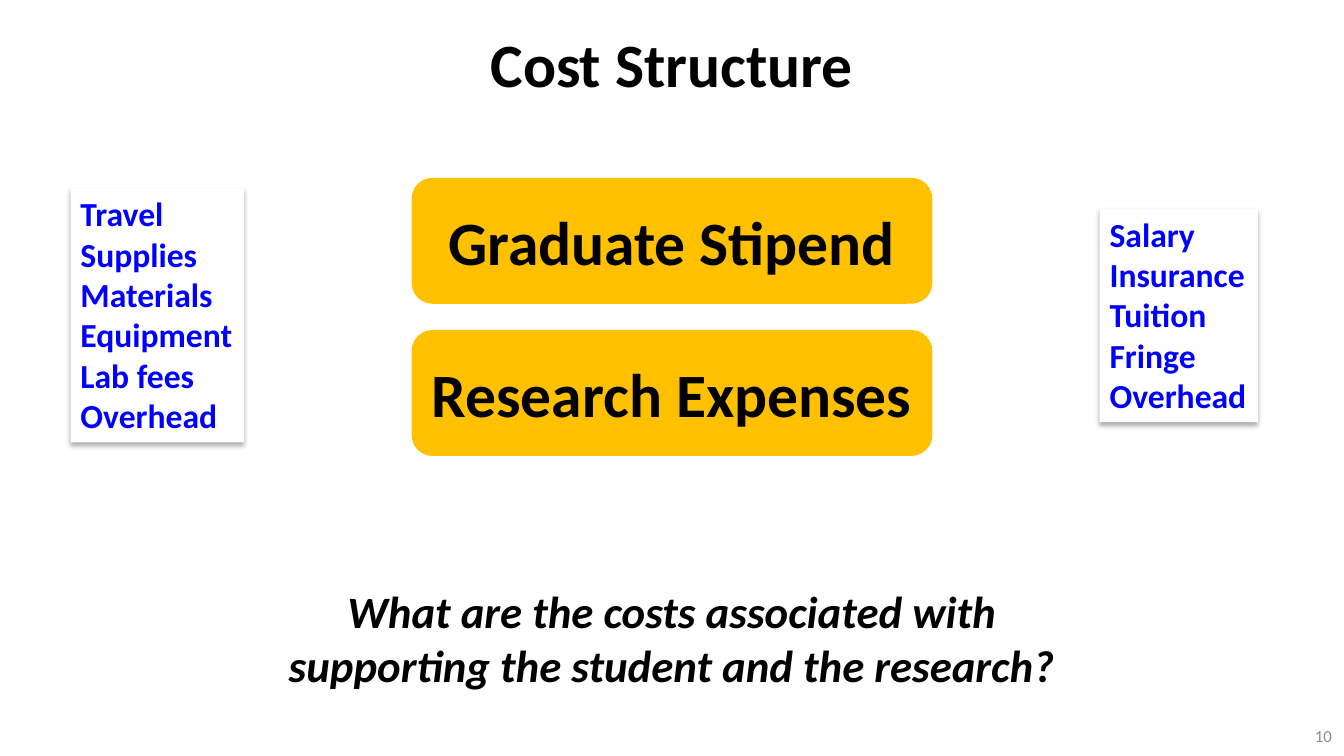
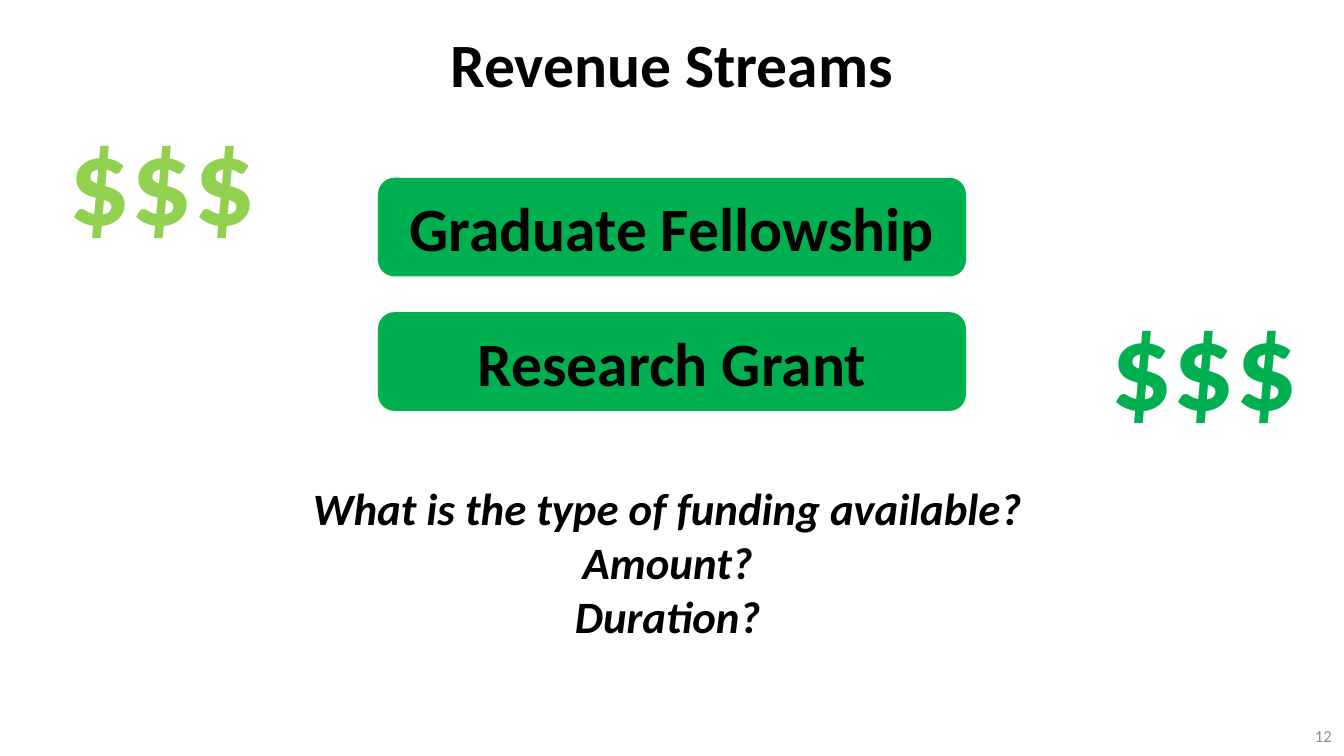
from lxml import etree
from pptx import Presentation
from pptx.dml.color import RGBColor
from pptx.enum import shapes, text
from pptx.oxml import ns
from pptx.util import Pt

# Shared style
FONT = "Calibri"
BLACK, WHITE, BLUE, GRAY = "000000", "FFFFFF", "0000FF", "8C8C8C"
AMBER, GREEN, LIME = "FFC000", "00B050", "92D050"
LEFT, CENTER, RIGHT = text.PP_ALIGN.LEFT, text.PP_ALIGN.CENTER, text.PP_ALIGN.RIGHT
SLIDE_W, SLIDE_H = 960, 540
TITLE_BOX = (48, 0, 864, 90)
NUMBER_BOX = (734.4, 511.2, 224, 28.8)
CARD_TOP = 127

# Content: boxes are left, top, width, height in points
SLIDES = [
    dict(
        title="Cost Structure", number="10",
        cards=["Graduate Stipend", "Research Expenses"],
        card_color=AMBER, card_size=(372, 90), card_gap=18.7,
        question=["What are the costs associated with supporting the student and the research?"],
        question_box=(183, 413.3, 594, 85),
        lists=[
            (["Travel", "Supplies", "Materials", "Equipment", "Lab fees", "Overhead"],
             (50.4, 134.6, 124, 181.4)),
            (["Salary", "Insurance", "Tuition", "Fringe", "Overhead"],
             (785.5, 149, 113, 152.6)),
        ],
        money=[],
    ),
    dict(
        title="Revenue Streams", number="12",
        cards=["Graduate Fellowship", "Research Grant"],
        card_color=GREEN, card_size=(420, 70.5), card_gap=25.5,
        question=["What is the type of funding available?", "Amount?", "Duration?"],
        question_box=(210, 340, 534, 124),
        lists=[],
        money=[(GREEN, (786.2, 201.6, 150, 113.8)), (LIME, (41.8, 69.8, 150, 113.8))],
    ),
]


def rgb(color):
    return RGBColor.from_string(color)


def write(shape, lines, size, color=BLACK, align=LEFT, middle=False,
          wrap=True, bold=True, italic=False):
    frame = shape.text_frame
    frame.text = "\n".join(lines)
    frame.word_wrap = wrap
    frame.vertical_anchor = text.MSO_ANCHOR.MIDDLE if middle else text.MSO_ANCHOR.TOP
    for paragraph in frame.paragraphs:
        paragraph.alignment = align
        for run in paragraph.runs:
            font = run.font
            font.name, font.size, font.bold, font.italic = FONT, Pt(size), bold, italic
            font.color.rgb = rgb(color)


def add_label(slide, box, lines, size, **style):
    write(slide.shapes.add_textbox(*map(Pt, box)), lines, size, **style)


def add_panel(slide, preset, box, fill):
    panel = slide.shapes.add_shape(preset, *map(Pt, box))
    panel.shadow.inherit = False
    panel.fill.solid()
    panel.fill.fore_color.rgb = rgb(fill)
    panel.line.fill.background()
    return panel


def add_drop_shadow(panel):
    effects = panel.element.spPr.find(ns.qn("a:effectLst"))
    shadow = etree.SubElement(effects, ns.qn("a:outerShdw"), blurRad=str(Pt(3.5)),
                              dist=str(Pt(2.2)), dir="5400000", rotWithShape="0")
    tint = etree.SubElement(shadow, ns.qn("a:srgbClr"), val=BLACK)
    etree.SubElement(tint, ns.qn("a:alpha"), val="32000")


def build_slide(deck, content):
    slide = deck.slides.add_slide(deck.slide_layouts[6])

    # Title, page number and question
    add_label(slide, TITLE_BOX, [content["title"]], 44, align=CENTER, middle=True)
    add_label(slide, NUMBER_BOX, [content["number"]], 12, color=GRAY, align=RIGHT,
              middle=True, bold=False)
    add_label(slide, content["question_box"], content["question"], 32,
              align=CENTER, italic=True)

    # Stacked cards, centred across the slide
    width, height = content["card_size"]
    for row, name in enumerate(content["cards"]):
        top = CARD_TOP + row * (height + content["card_gap"])
        card = add_panel(slide, shapes.MSO_SHAPE.ROUNDED_RECTANGLE,
                         ((SLIDE_W - width) / 2, top, width, height),
                         content["card_color"])
        write(card, [name], 44, align=CENTER, middle=True)

    # Side lists of cost items
    for items, box in content["lists"]:
        panel = add_panel(slide, shapes.MSO_SHAPE.RECTANGLE, box, WHITE)
        add_drop_shadow(panel)
        write(panel, items, 24, color=BLUE, wrap=False)

    # Dollar signs
    for color, box in content["money"]:
        add_label(slide, box, ["$$$"], 88, color=color, wrap=False)


def main():
    deck = Presentation()
    deck.slide_width, deck.slide_height = Pt(SLIDE_W), Pt(SLIDE_H)
    for content in SLIDES:
        build_slide(deck, content)
    deck.save("out.pptx")


if __name__ == "__main__":
    main()
